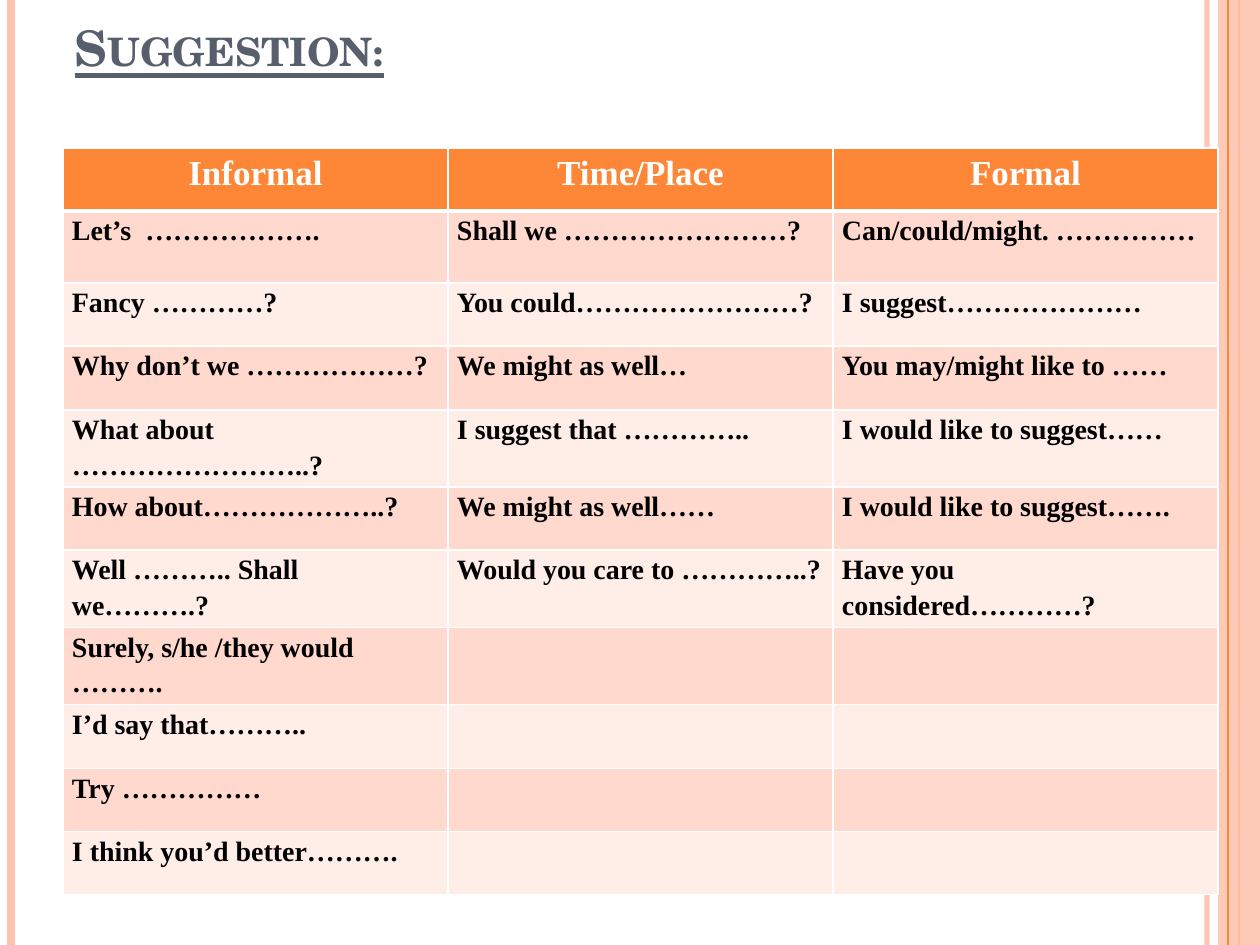
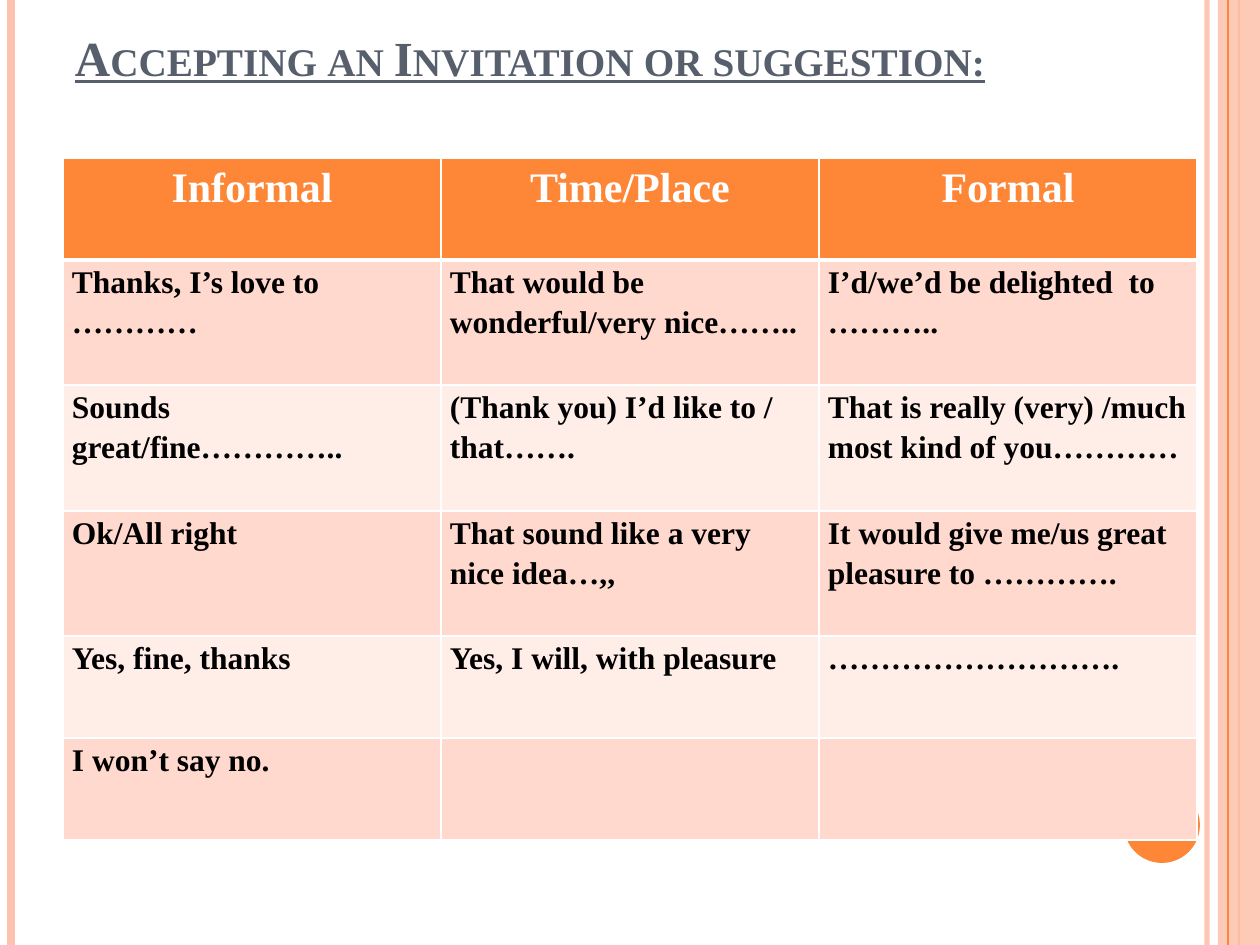
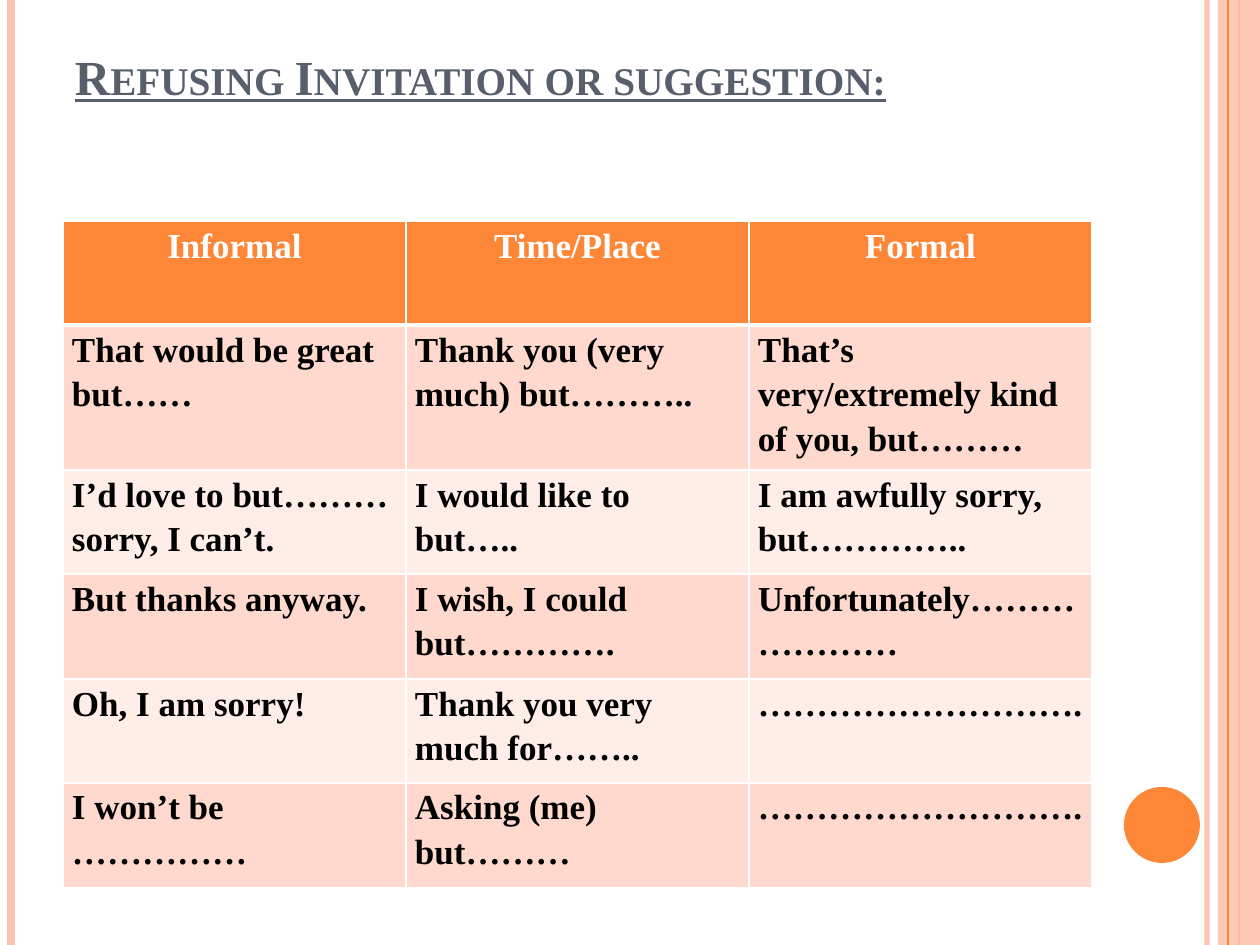
from dataclasses import dataclass

from lxml.etree import SubElement
from pptx import Presentation
from pptx.dml.color import RGBColor
from pptx.enum.shapes import MSO_CONNECTOR, MSO_SHAPE
from pptx.enum.text import MSO_ANCHOR, PP_ALIGN
from pptx.oxml.ns import qn
from pptx.util import Pt

PX = 914400 / 126  # EMU in one px
WIDTH, HEIGHT = 1260, 945
LEFT = 63


def px(length):
    return round(length * PX)


@dataclass(frozen=True)
class Theme:
    accent: str = "FE8637"
    soft: str = "FEC3AE"
    title: str = "575F6D"
    header_text: str = "FFFFFF"
    body_text: str = "000000"
    grid: str = "FFFFFF"
    bands: tuple = ("FFD9CE", "FFEDE8")
    title_font: str = "TeX Gyre Schola"
    text_font: str = "Times New Roman"
    title_size: float = 28
    line_spacing: float = 1.15
    grid_width: float = 1
    header_rule: float = 3


class SlideBuilder:
    def __init__(self, deck, theme):
        self.deck = deck
        self.theme = theme
        self.slide = None

    def new_slide(self, with_dot=True):
        self.slide = self.deck.slides.add_slide(self.deck.slide_layouts[6])
        theme = self.theme
        # Side bands
        self.vertical_line(1207, theme.soft, 3, 93)
        self.vertical_line(11, theme.soft, 4.5)
        self.vertical_line(1239, theme.accent, 1.5)
        self.shape(MSO_SHAPE.RECTANGLE, 1218, 0, 42, HEIGHT, theme.soft, 87)
        self.vertical_line(1228, theme.accent, 0.75)
        if with_dot:
            self.shape(MSO_SHAPE.OVAL, 1124, 787, 76, 76, theme.accent)

    def set_alpha(self, element, percent):
        if percent < 100:
            for color in element.iter(qn("a:srgbClr")):
                SubElement(color, qn("a:alpha"), val=str(percent * 1000))

    def vertical_line(self, x, color, width, opacity=100):
        line = self.slide.shapes.add_connector(
            MSO_CONNECTOR.STRAIGHT, px(x), 0, px(x), px(HEIGHT))
        line.line.color.rgb = RGBColor.from_string(color)
        line.line.width = Pt(width)
        properties = line._element.spPr
        self.set_alpha(properties, opacity)
        SubElement(properties, qn("a:effectLst"))

    def shape(self, kind, x, y, width, height, color, opacity=100):
        shape = self.slide.shapes.add_shape(
            kind, px(x), px(y), px(width), px(height))
        shape.shadow.inherit = False
        shape.fill.solid()
        shape.fill.fore_color.rgb = RGBColor.from_string(color)
        shape.line.fill.background()
        self.set_alpha(shape._element.spPr, opacity)

    def add_span(self, para, text, font, size, color):
        span = para.add_run()
        span.text = text
        span.font.name = font
        span.font.size = Pt(size)
        span.font.bold = True
        span.font.color.rgb = RGBColor.from_string(color)
        return span

    def title(self, text, bottom, font):
        height = 60
        box = self.slide.shapes.add_textbox(
            px(LEFT), px(bottom - height), px(1134), px(height))
        frame = box.text_frame
        frame.word_wrap = True
        frame.vertical_anchor = MSO_ANCHOR.BOTTOM
        frame.margin_left = px(12)
        frame.margin_top = frame.margin_bottom = 0
        span = self.add_span(frame.paragraphs[0], text, font,
                             self.theme.title_size, self.theme.title)
        span.font.underline = True
        span._r.get_or_add_rPr().set("cap", "small")

    def borders(self, cell, widths):
        properties = cell._tc.get_or_add_tcPr()
        for side, width in widths.items():
            line = SubElement(properties, qn(f"a:ln{side}"), w=str(Pt(width)))
            fill = SubElement(line, qn("a:solidFill"))
            SubElement(fill, qn("a:srgbClr"), val=self.theme.grid)

    def cell(self, cell, text, row, size):
        theme = self.theme
        is_header = row == 0
        self.borders(cell, {
            "L": theme.grid_width,
            "R": theme.grid_width,
            "T": theme.header_rule if row == 1 else theme.grid_width,
            "B": theme.header_rule if is_header else theme.grid_width,
        })
        cell.fill.solid()
        cell.fill.fore_color.rgb = RGBColor.from_string(
            theme.accent if is_header else theme.bands[(row - 1) % 2])
        cell.margin_left = cell.margin_right = px(9)
        cell.margin_top = cell.margin_bottom = 0
        if text:
            para = cell.text_frame.paragraphs[0]
            para.line_spacing = theme.line_spacing
            para.alignment = PP_ALIGN.CENTER if is_header else PP_ALIGN.LEFT
            self.add_span(para, text, theme.text_font, size,
                          theme.header_text if is_header else theme.body_text)

    def table(self, top, column_width, heights, phrases, header_size, body_size):
        rows = [HEADINGS, *phrases]
        columns = len(HEADINGS)
        table = self.slide.shapes.add_table(
            len(rows), columns, px(LEFT), px(top),
            px(column_width * columns), px(sum(heights))).table
        table.first_row = table.horz_banding = False
        for column in table.columns:
            column.width = px(column_width)
        for row, (texts, height) in enumerate(zip(rows, heights)):
            table.rows[row].height = px(height)
            size = body_size if row else header_size
            for column, text in enumerate(texts):
                self.cell(table.cell(row, column), text, row, size)


HEADINGS = ("Informal", "Time/Place", "Formal")

SUGGESTING = [
    ("Let’s  ……………….", "Shall we ……………………?", "Can/could/might. ……………"),
    ("Fancy …………?", "You could……………………?", "I suggest…………………"),
    ("Why don’t we ………………?", "We might as well…", "You may/might like to ……"),
    ("What about ……………………..?", "I suggest that …………..", "I would like to suggest……"),
    ("How about………………..?", "We might as well……", "I would like to suggest……."),
    ("Well ……….. Shall we……….?", "Would you care to …………..?",
     "Have you considered…………?"),
    ("Surely, s/he /they would ……….", "", ""),
    ("I’d say that………..", "", ""),
    ("Try ……………", "", ""),
    ("I think you’d better……….", "", ""),
]

ACCEPTING = [
    ("Thanks, I’s love to …………", "That would be wonderful/very nice……..",
     "I’d/we’d be delighted  to ……….."),
    ("Sounds great/fine…………..", "(Thank you) I’d like to / that…….",
     "That is really (very) /much most kind of you…………"),
    ("Ok/All right", "That sound like a very nice idea…,,",
     "It would give me/us great pleasure to …………."),
    ("Yes, fine, thanks", "Yes, I will, with pleasure", "………………………."),
    ("I won’t say no.", "", ""),
]

REFUSING = [
    ("That would be great but……", "Thank you (very much) but………..",
     "That’s very/extremely kind of you, but………"),
    ("I’d love to but……… sorry, I can’t.", "I would like to but…..",
     "I am awfully sorry, but………….."),
    ("But thanks anyway.", "I wish, I could but………….", "Unfortunately…………………"),
    ("Oh, I am sorry!", "Thank you very much for……..", "………………………."),
    ("I won’t be ……………", "Asking (me) but………", "………………………."),
]


def main():
    deck = Presentation()
    deck.slide_width, deck.slide_height = px(WIDTH), px(HEIGHT)
    theme = Theme()
    builder = SlideBuilder(deck, theme)

    # Suggestion
    builder.new_slide(with_dot=False)
    builder.title("Suggestion:", 76, theme.title_font)
    builder.table(148, 385, [63, 72, 63, 64, 75, 63, 72, 75, 64, 63, 63],
                  SUGGESTING, 20, 16)

    # Accepting
    builder.new_slide()
    builder.title("Accepting an Invitation or suggestion:", 86, theme.text_font)
    builder.table(158, 378, [102, 125, 126, 125, 102, 102], ACCEPTING, 24, 18)

    # Refusing
    builder.new_slide()
    builder.title("Refusing Invitation or suggestion:", 105, theme.text_font)
    builder.table(221, 343, [104, 134, 104, 105, 104, 105], REFUSING, 20, 20)

    deck.save("out.pptx")


if __name__ == "__main__":
    main()
